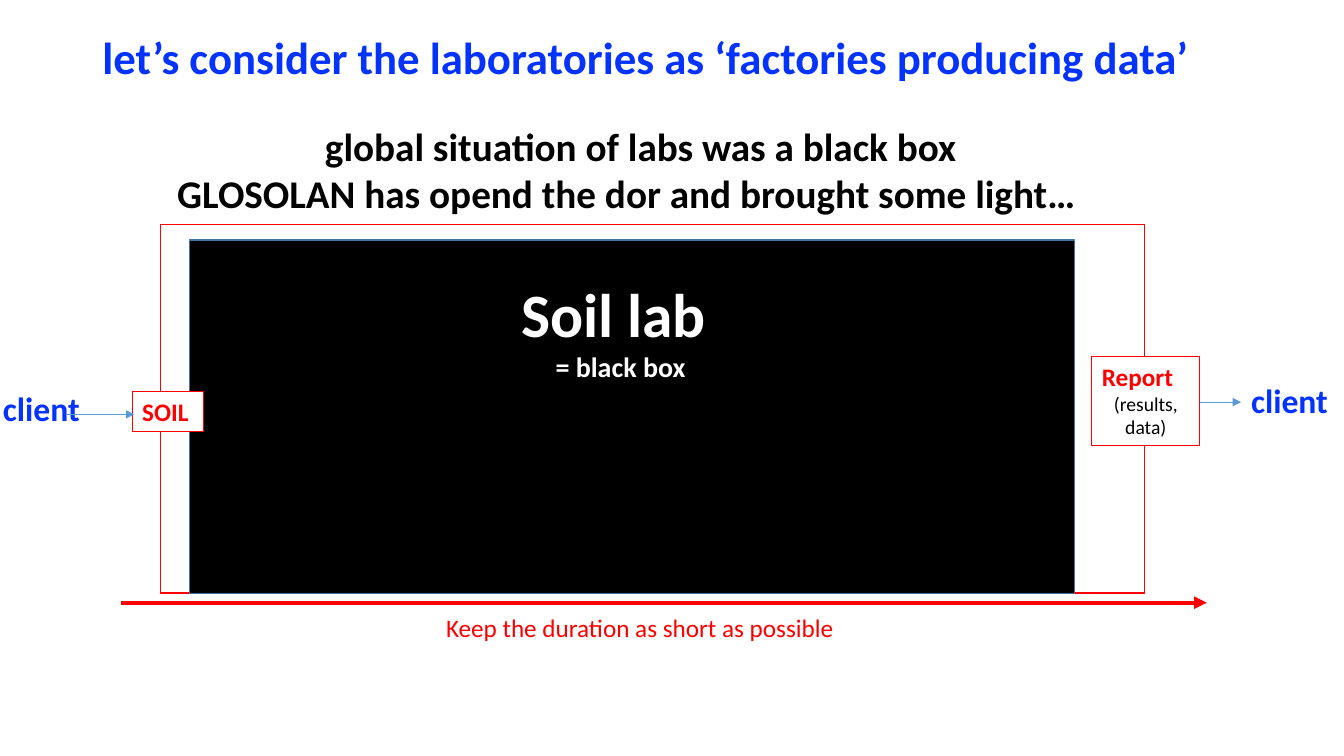
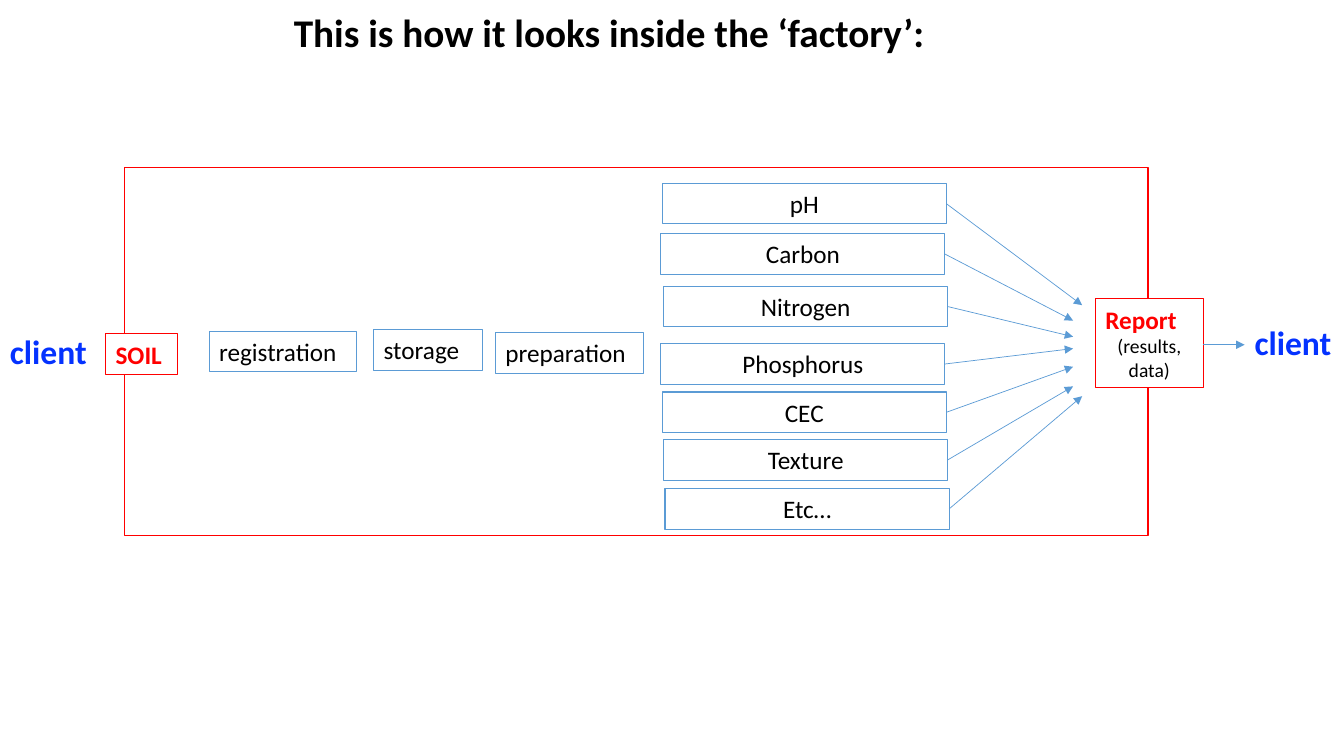
from collections import namedtuple

from lxml import etree
from pptx import Presentation
from pptx.dml.color import RGBColor
from pptx.enum.shapes import MSO_CONNECTOR as Connector, MSO_SHAPE as Preset
from pptx.enum.text import MSO_ANCHOR as Anchor, MSO_AUTO_SIZE as AutoSize, PP_ALIGN as Align
from pptx.oxml.ns import qn
from pptx.util import Pt

FONT = "Calibri"
BLUE, RED, STEEL, NAVY = "0432FF", "FF0000", "5B9BD5", "43739E"
BLACK, WHITE = "000000", "FFFFFF"
ROW_HEIGHT = 29

Box = namedtuple("Box", "left top width height")
Line = namedtuple("Line", "text size color bold align", defaults=(18, BLACK, False, Align.LEFT))


def rgb(color):
    return RGBColor.from_string(color)


def points(box):
    return [Pt(value) for value in box]


def write_lines(shape, lines):
    """Fill a shape's text frame with one paragraph per line."""
    frame = shape.text_frame
    frame.word_wrap = True
    frame.auto_size = AutoSize.NONE
    frame.vertical_anchor = Anchor.TOP
    for index, line in enumerate(lines):
        paragraph = frame.add_paragraph() if index else frame.paragraphs[0]
        paragraph.alignment = line.align
        paragraph.space_before = Pt(0)
        run = paragraph.add_run()
        run.text = line.text
        run.font.name = FONT
        run.font.size = Pt(line.size)
        run.font.bold = line.bold
        run.font.color.rgb = rgb(line.color)


def add_text(slide, box, *lines):
    write_lines(slide.shapes.add_textbox(*points(box)), lines)


def add_box(slide, box, outline, *lines, fill=None, weight=0.75):
    shape = slide.shapes.add_shape(Preset.RECTANGLE, *points(box))
    shape.shadow.inherit = False
    if fill:
        shape.fill.solid()
        shape.fill.fore_color.rgb = rgb(fill)
    else:
        shape.fill.background()
    shape.line.color.rgb = rgb(outline)
    shape.line.width = Pt(weight)
    write_lines(shape, lines)


def add_arrow(slide, start, end, color=STEEL, weight=0.5):
    arrow = slide.shapes.add_connector(Connector.STRAIGHT, *points(start + end))
    arrow.line.color.rgb = rgb(color)
    arrow.line.width = Pt(weight)
    etree.SubElement(arrow.line._get_or_add_ln(), qn("a:tailEnd"), type="triangle")
    etree.SubElement(arrow._element.spPr, qn("a:effectLst"))


def add_titled_slide(presentation, box, title):
    slide = presentation.slides.add_slide(presentation.slide_layouts[5])
    placeholder = slide.shapes.title
    placeholder.left, placeholder.top, placeholder.width, placeholder.height = points(box)
    write_lines(placeholder, [title])
    return slide


def add_client(slide, left, top):
    add_text(slide, Box(left, top, 74, 36), Line("client", 24, BLUE, True))


def add_entry(slide, frame, client_left, soil_left):
    """Client and soil sample on the left edge of the laboratory frame."""
    add_client(slide, client_left, frame.top + 113)
    add_box(slide, Box(soil_left, frame.top + 119, 51, ROW_HEIGHT), RED,
            Line("SOIL", 18, RED, True), fill=WHITE)


def add_exit(slide, frame):
    """Report and client on the right edge of the laboratory frame."""
    right = frame.left + frame.width
    report = Box(right - 37.5, frame.top + 94, 77, 63.5)
    add_box(slide, report, RED, Line("Report", 18, RED, True),
            Line("(results, data)", 14, align=Align.CENTER), fill=WHITE)
    middle = report.top + report.height / 2 + 1
    add_arrow(slide, (report.left + report.width, middle), (right + 69, middle))
    add_client(slide, right + 69, frame.top + 107)


def add_black_box(slide, box):
    add_box(slide, box, NAVY, fill=BLACK, weight=1)
    add_text(slide, Box(box.left + 21.5, box.top + 22, 572.5, 85),
             Line("Soil lab ", 44, WHITE, True, Align.CENTER),
             Line("= black box", 20, WHITE, True, Align.CENTER))


def add_duration(slide, frame):
    bottom = frame.top + frame.height
    add_arrow(slide, (frame.left - 28, bottom + 7),
              (frame.left + frame.width + 44.5, bottom + 7), RED, 3)
    add_text(slide, Box(frame.left + 197, bottom + 10, 492, ROW_HEIGHT),
             Line("Keep the duration as short as possible", color=RED))


def add_steps(slide, frame):
    steps = [("registration", 60.5, 117, 105.5), ("storage", 178, 116, 78),
             ("preparation", 265, 118, 105.5)]
    for name, left, top, width in steps:
        add_box(slide, Box(frame.left + left, frame.top + top, width, ROW_HEIGHT),
                STEEL, Line(name))


def add_analyses(slide, frame):
    """Stack of analyses, each with an arrow towards the report."""
    # name, left, top, arrow tip x, arrow tip y, all from the frame's corner
    analyses = [
        ("pH", 384, 11.5, 684, 98.5),
        ("Carbon", 383, 47.5, 677.5, 109.5),
        ("Nitrogen", 385, 85, 677.5, 121),
        ("Phosphorus", 383, 126, 677.5, 129.5),
        ("CEC", 384, 160.5, 677.5, 142.5),
        ("Texture", 385, 194.5, 677.5, 156.5),
        ("Etc…", 386, 229.5, 684, 163.5),
    ]
    for name, left, top, tip_x, tip_y in analyses:
        box = Box(frame.left + left, frame.top + top, 203, ROW_HEIGHT)
        add_box(slide, box, STEEL, Line(name, align=Align.CENTER))
        add_arrow(slide, (box.left + box.width, box.top + box.height / 2),
                  (frame.left + tip_x, frame.top + tip_y))


def build_black_box_slide(presentation):
    slide = add_titled_slide(
        presentation, Box(66, 17.5, 849, 46),
        Line("let’s consider the laboratories as ‘factories producing data’", 32, BLUE, True))
    add_text(slide, Box(119.5, 84, 676, 75),
             Line("global situation of labs was a black box", 28, BLACK, True, Align.CENTER),
             Line("GLOSOLAN has opend the dor and brought some light…", 28, BLACK, True))
    frame = Box(114.5, 160.5, 703, 263)
    add_box(slide, frame, RED, weight=1)
    add_exit(slide, frame)
    add_duration(slide, frame)
    add_black_box(slide, Box(frame.left + 21, frame.top + 11, 632, 252.5))
    soil_left = frame.left - 20
    add_entry(slide, frame, -5, soil_left)
    arrow_y = frame.top + 135.5
    add_arrow(slide, (47.5, arrow_y), (soil_left + 1.5, arrow_y))


def build_factory_slide(presentation):
    slide = add_titled_slide(
        presentation, Box(97, 2, 676, 41),
        Line("This is how it looks inside the ‘factory’:", 28, BLACK, True, Align.CENTER))
    frame = Box(89, 119.5, 731, 263)
    add_box(slide, frame, RED, weight=1)
    add_entry(slide, frame, 0, frame.left - 13.5)
    add_steps(slide, frame)
    add_analyses(slide, frame)
    add_exit(slide, frame)


def main():
    presentation = Presentation()
    presentation.slide_width, presentation.slide_height = Pt(960), Pt(540)
    build_black_box_slide(presentation)
    build_factory_slide(presentation)
    presentation.save("out.pptx")


if __name__ == "__main__":
    main()
